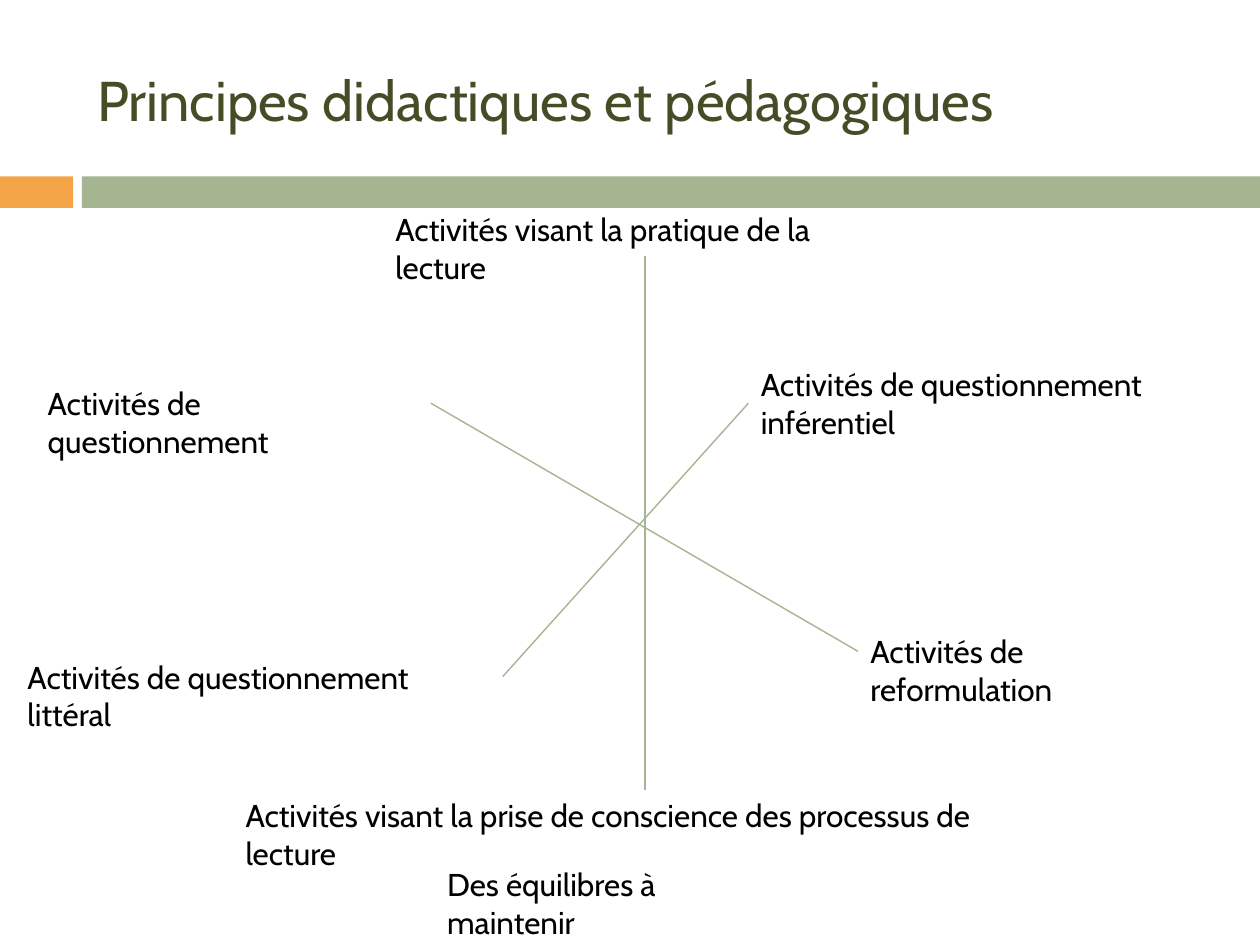
from dataclasses import dataclass
from typing import NamedTuple

from lxml import etree
from pptx import Presentation
from pptx import util as u
from pptx.dml.color import RGBColor
from pptx.enum import shapes, text
from pptx.oxml.ns import qn

SLIDE_WIDTH = u.Inches(10)
SLIDE_HEIGHT = u.Inches(7.5)
COLUMN = SLIDE_WIDTH / 100
ROW = SLIDE_HEIGHT / 75


@dataclass(frozen=True)
class Theme:
    font: str = "Cabin"
    title_size: int = 32
    label_size: int = 18
    line_width: float = 0.79
    title_color: str = "444D26"
    label_color: str = "000000"
    orange: str = "F3A447"
    green: str = "A5B592"


class Box(NamedTuple):
    column: float
    row: float
    columns: float
    rows: float


class Band(NamedTuple):
    box: Box
    color: str


class Label(NamedTuple):
    wording: str
    box: Box


class Axis(NamedTuple):
    start: tuple[float, float]
    end: tuple[float, float]


THEME = Theme()
TITLE_BOX = Box(6.7, 2.5, 89.2, 10.8)
LABEL_ROWS = 4

BANDS = [
    Band(Box(0, 14, 5.8, 2.5), THEME.orange),
    Band(Box(6.5, 14, 93.5, 2.5), THEME.green),
]

LABELS = [
    Label("Des équilibres à maintenir", Box(34.5, 68.2, 28.1, LABEL_ROWS)),
    Label("Activités visant la pratique de la lecture", Box(30.4, 16.2, 42.3, LABEL_ROWS)),
    Label(
        "Activités visant la prise de conscience des processus de lecture",
        Box(18.5, 62.7, 66.1, LABEL_ROWS),
    ),
    Label("Activités de questionnement", Box(2.8, 30, 31.5, LABEL_ROWS)),
    Label("Activités de reformulation", Box(68.1, 49.7, 28.7, LABEL_ROWS)),
    Label("Activités de questionnement littéral", Box(1.2, 51.7, 38.7, LABEL_ROWS)),
    Label("Activités de questionnement inférentiel", Box(59.4, 28.5, 34, 7.1)),
]

AXES = [
    Axis((51.2, 20.3), (51.2, 62.7)),
    Axis((34.2, 32), (68.1, 51.7)),
    Axis((39.9, 53.7), (59.4, 32)),
]


def point(column: float, row: float) -> tuple[int, int]:
    return round(column * COLUMN), round(row * ROW)


def frame(box: Box) -> tuple[int, int, int, int]:
    return *point(box.column, box.row), *point(box.columns, box.rows)


def write_text(text_frame, wording: str, *, size: int, color: str, anchor, auto_size) -> None:
    text_frame.word_wrap = True
    text_frame.auto_size = auto_size
    text_frame.vertical_anchor = anchor
    paragraph = text_frame.paragraphs[0]
    paragraph.alignment = text.PP_ALIGN.LEFT
    run = paragraph.add_run()
    run.text = wording
    run.font.name = THEME.font
    run.font.size = u.Pt(size)
    run.font.color.rgb = RGBColor.from_string(color)


def draw_band(slide, band: Band) -> None:
    shape = slide.shapes.add_shape(shapes.MSO_SHAPE.RECTANGLE, *frame(band.box))
    shape.shadow.inherit = False
    shape.fill.solid()
    shape.fill.fore_color.rgb = RGBColor.from_string(band.color)
    shape.line.fill.background()


def draw_title(slide, wording: str) -> None:
    title = slide.shapes.title
    title.left, title.top, title.width, title.height = frame(TITLE_BOX)
    write_text(
        title.text_frame,
        wording,
        size=THEME.title_size,
        color=THEME.title_color,
        anchor=text.MSO_ANCHOR.MIDDLE,
        auto_size=text.MSO_AUTO_SIZE.NONE,
    )


def draw_label(slide, label: Label) -> None:
    shape = slide.shapes.add_textbox(*frame(label.box))
    write_text(
        shape.text_frame,
        label.wording,
        size=THEME.label_size,
        color=THEME.label_color,
        anchor=text.MSO_ANCHOR.TOP,
        auto_size=text.MSO_AUTO_SIZE.SHAPE_TO_FIT_TEXT,
    )


def draw_axis(slide, axis: Axis) -> None:
    connector = slide.shapes.add_connector(
        shapes.MSO_CONNECTOR.STRAIGHT, *point(*axis.start), *point(*axis.end)
    )
    connector.line.color.rgb = RGBColor.from_string(THEME.green)
    connector.line.width = u.Pt(THEME.line_width)
    etree.SubElement(connector._element.spPr, qn("a:effectLst"))


def main() -> None:
    presentation = Presentation()
    presentation.slide_width = SLIDE_WIDTH
    presentation.slide_height = SLIDE_HEIGHT
    title_only = presentation.slide_layouts[5]
    slide = presentation.slides.add_slide(title_only)

    draw_title(slide, "Principes didactiques et pédagogiques")
    for band in BANDS:
        draw_band(slide, band)
    for label in LABELS:
        draw_label(slide, label)
    for axis in AXES:
        draw_axis(slide, axis)

    presentation.save("out.pptx")


if __name__ == "__main__":
    main()
